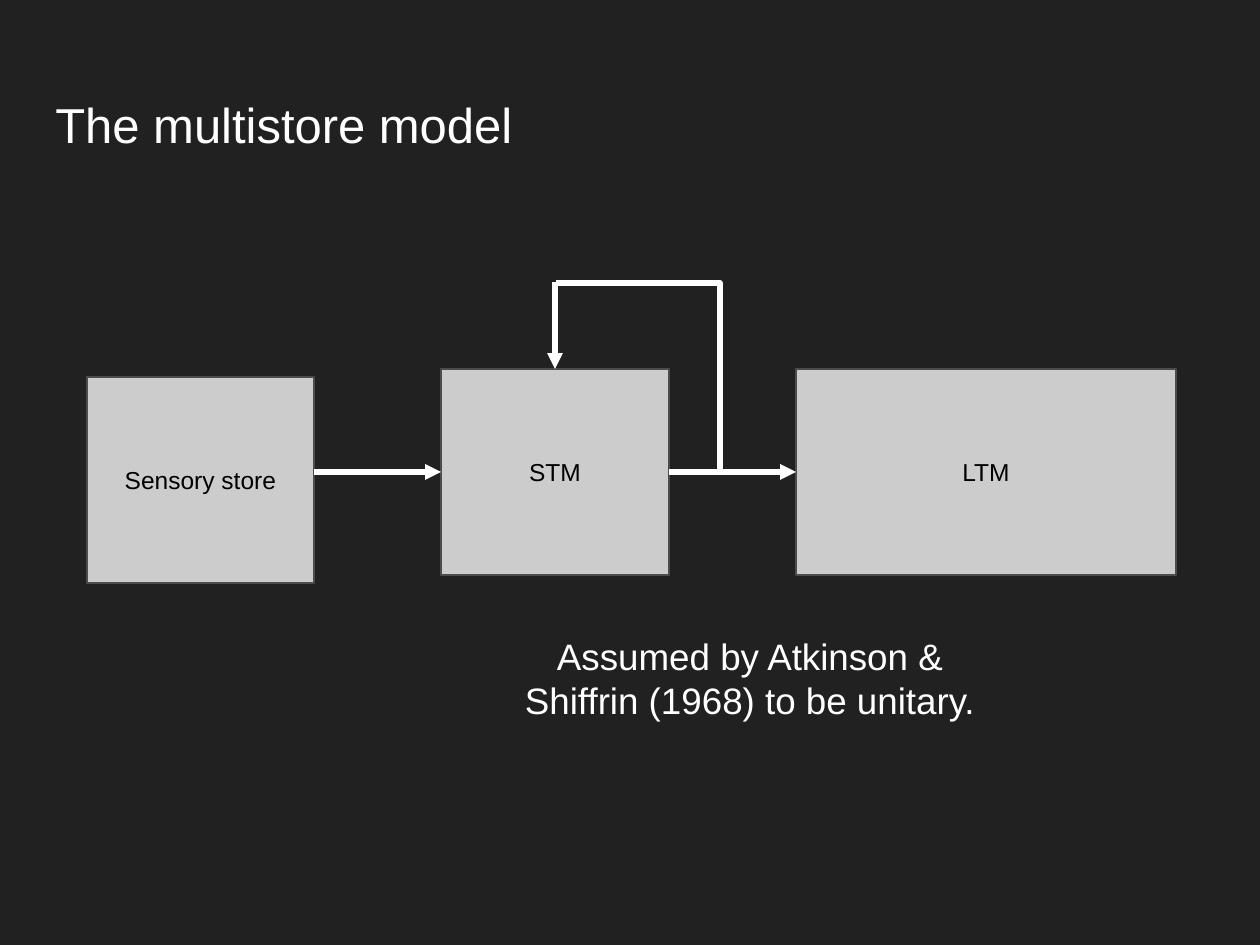
from dataclasses import dataclass

from lxml.etree import SubElement
from pptx import Presentation
from pptx.dml.color import RGBColor
from pptx.enum.shapes import MSO_CONNECTOR, MSO_SHAPE
from pptx.enum.text import MSO_ANCHOR, PP_ALIGN
from pptx.oxml.ns import qn
from pptx.shapes.autoshape import Shape
from pptx.shapes.connector import Connector
from pptx.slide import Slide
from pptx.text.text import TextFrame
from pptx.util import Emu, Pt

PX_PER_INCH = 126
FONT = "Arial"
BACKGROUND = RGBColor(0x21, 0x21, 0x21)
WHITE = RGBColor(0xFF, 0xFF, 0xFF)
BLACK = RGBColor(0x00, 0x00, 0x00)
STORE_FILL = RGBColor(0xCC, 0xCC, 0xCC)
STORE_LINE = RGBColor(0x4C, 0x4C, 0x4C)
TOP, LEFT, RIGHT = 0, 1, 3


def px(length: int) -> Emu:
    return Emu(round(length * 914400 / PX_PER_INCH))


@dataclass(frozen=True)
class Area:
    left: int
    top: int
    width: int
    height: int

    def emu(self) -> tuple[Emu, Emu, Emu, Emu]:
        return px(self.left), px(self.top), px(self.width), px(self.height)


@dataclass(frozen=True)
class Store:
    label: str
    area: Area


@dataclass(frozen=True)
class Arrow:
    start: tuple[int, int]
    end: tuple[int, int]
    source: tuple[str, int] | None
    target: tuple[str, int]


STORES = [
    Store("STM", Area(441, 369, 228, 206)),
    Store("LTM", Area(796, 369, 380, 206)),
    Store("Sensory store", Area(87, 377, 227, 206)),
]
ARROWS = [
    Arrow((669, 472), (796, 472), ("STM", RIGHT), ("LTM", LEFT)),
    Arrow((314, 472), (441, 472), None, ("STM", LEFT)),
    Arrow((555, 282), (555, 369), None, ("STM", TOP)),
]
REHEARSAL_LOOP = [(556, 283), (720, 283), (720, 472)]


def write(frame: TextFrame, text: str, size: int, color: RGBColor,
          align: PP_ALIGN, anchor: MSO_ANCHOR) -> None:
    frame.word_wrap = True
    frame.vertical_anchor = anchor
    frame.margin_left = frame.margin_right = Emu(91440)
    frame.margin_top = frame.margin_bottom = Emu(91440)
    para = frame.paragraphs[0]
    para.alignment = align
    span = para.add_run()
    span.text = text
    span.font.name = FONT
    span.font.size = Pt(size)
    span.font.color.rgb = color


def add_text(page: Slide, area: Area, text: str, size: int, align: PP_ALIGN) -> None:
    box = page.shapes.add_textbox(*area.emu())
    write(box.text_frame, text, size, WHITE, align, MSO_ANCHOR.TOP)


def add_store(page: Slide, store: Store) -> Shape:
    box = page.shapes.add_shape(MSO_SHAPE.RECTANGLE, *store.area.emu())
    box.shadow.inherit = False
    box.fill.solid()
    box.fill.fore_color.rgb = STORE_FILL
    box.line.color.rgb = STORE_LINE
    box.line.width = Pt(1.5)
    write(box.text_frame, store.label, 14, BLACK, PP_ALIGN.CENTER, MSO_ANCHOR.MIDDLE)
    return box


def style_line(shape: Shape | Connector) -> None:
    shape.line.color.rgb = WHITE
    shape.line.width = Pt(3)


def add_arrow(page: Slide, arrow: Arrow, boxes: dict[str, Shape]) -> None:
    connector = page.shapes.add_connector(
        MSO_CONNECTOR.STRAIGHT, *map(px, arrow.start + arrow.end))
    if arrow.source:
        name, side = arrow.source
        connector.begin_connect(boxes[name], side)
    name, side = arrow.target
    connector.end_connect(boxes[name], side)
    style_line(connector)
    SubElement(connector.line._get_or_add_ln(), qn("a:tailEnd"), type="triangle")
    SubElement(connector._element.spPr, qn("a:effectLst"))


def add_loop(page: Slide, points: list[tuple[int, int]]) -> None:
    corners = [(px(x), px(y)) for x, y in points]
    builder = page.shapes.build_freeform(*corners[0])
    builder.add_line_segments(corners[1:], close=False)
    loop = builder.convert_to_shape()
    loop.shadow.inherit = False
    loop.fill.background()
    style_line(loop)


def main() -> None:
    deck = Presentation()
    deck.slide_width, deck.slide_height = px(1260), px(945)
    page = deck.slides.add_slide(deck.slide_layouts[6])
    page.background.fill.solid()
    page.background.fill.fore_color.rgb = BACKGROUND

    # Title
    add_text(page, Area(43, 82, 1174, 105), "The multistore model", 28, PP_ALIGN.LEFT)

    # Memory stores and the flow between them
    boxes = {store.label: add_store(page, store) for store in STORES}
    for arrow in ARROWS:
        add_arrow(page, arrow, boxes)
    add_loop(page, REHEARSAL_LOOP)

    # Remark under the stores
    add_text(page, Area(488, 621, 524, 152),
             "Assumed by Atkinson & Shiffrin (1968) to be unitary.", 21, PP_ALIGN.CENTER)

    deck.save("out.pptx")


if __name__ == "__main__":
    main()
